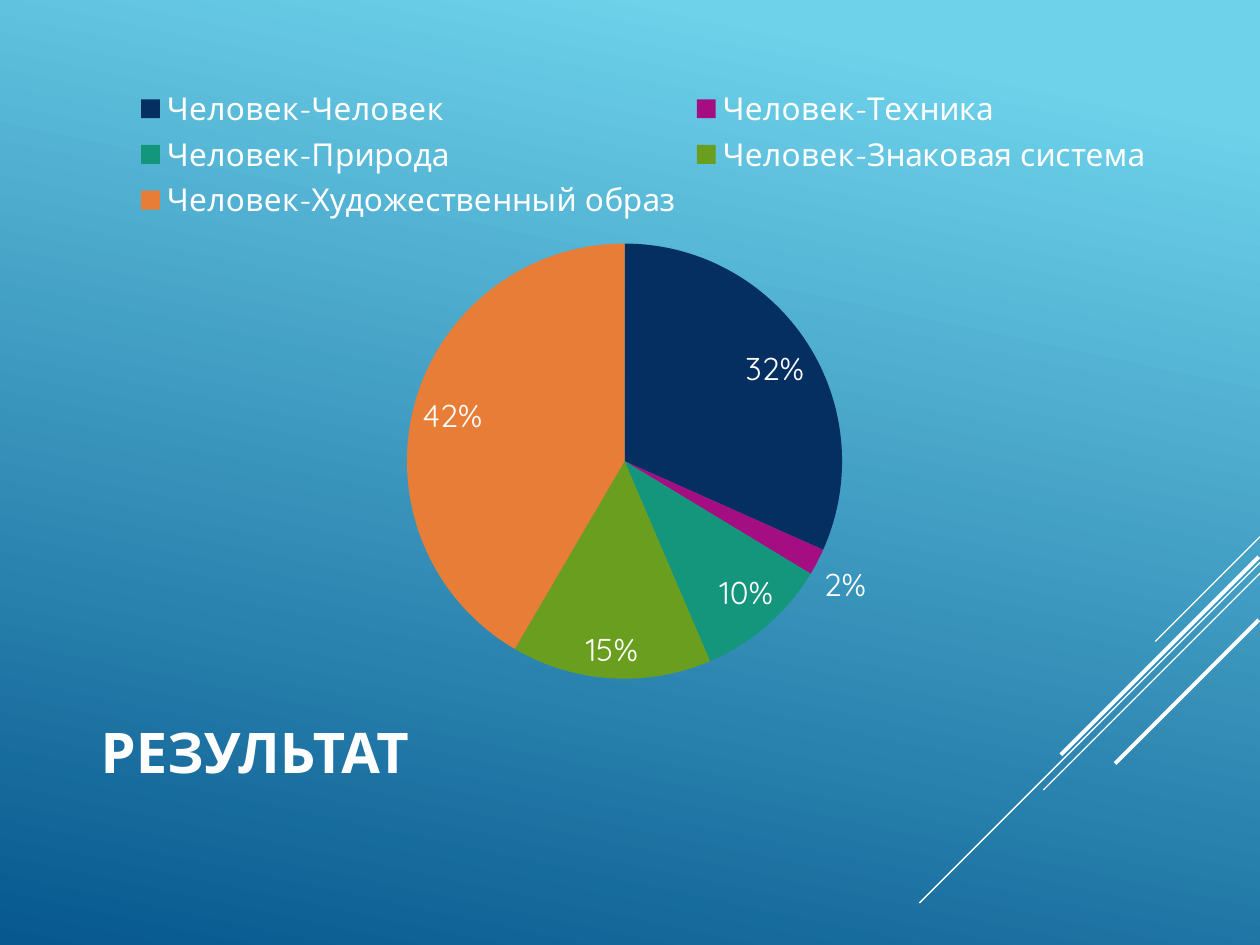
from lxml import etree
from pptx import Presentation
from pptx.chart.data import CategoryChartData
from pptx.dml.color import RGBColor
from pptx.enum.chart import XL_CHART_TYPE, XL_LABEL_POSITION, XL_LEGEND_POSITION
from pptx.enum.shapes import MSO_CONNECTOR
from pptx.enum.text import MSO_ANCHOR, PP_ALIGN
from pptx.oxml.ns import qn
from pptx.util import Pt

PIE = XL_CHART_TYPE.PIE
FIT = XL_LABEL_POSITION.BEST_FIT
TOP = XL_LEGEND_POSITION.TOP
LINE = MSO_CONNECTOR.STRAIGHT
MIDDLE = MSO_ANCHOR.MIDDLE
LEFT = PP_ALIGN.LEFT

FONT = "Quicksand"
COLORS = {
    "white": "FFFFFF", "sky": "6ED2EB", "deep": "06588E",
    "navy": "052F61", "plum": "A50E82", "teal": "14967C",
    "green": "6A9E1F", "orange": "E87D37",
}


def color(name):
    return RGBColor.from_string(COLORS[name])


def write(frame, text, *, size, bold=False, ink="white", align=LEFT, anchor=MIDDLE):
    frame.word_wrap = True
    frame.vertical_anchor = anchor
    par = frame.paragraphs[0]
    par.alignment = align
    run = par.add_run()
    run.text = text
    run.font.name = FONT
    run.font.size = Pt(size)
    run.font.bold = bold
    run.font.color.rgb = color(ink)


deck = Presentation()
deck.slide_width, deck.slide_height = Pt(720), Pt(540)
slide = deck.slides.add_slide(deck.slide_layouts[5])

# Background gradient (the angle counts counter-clockwise)
fill = slide.background.fill
fill.gradient()
fill.gradient_angle = 258
for stop, (name, place) in zip(fill.gradient_stops, [("sky", 0.1), ("deep", 1)]):
    stop.color.rgb = color(name)
    stop.position = place

# Diagonal lines: right end x and y, left end x and y, width
for x1, y1, x2, y2, width in [
    (720, 306.7, 660.2, 366.5, 0.75),
    (720, 321.4, 525.4, 516, 0.75),
    (720, 327.6, 596.2, 451.4, 0.75),
    (719.3, 318.2, 606.2, 431.3, 2.25),
    (719.3, 354.2, 637.2, 436.3, 2.25),
]:
    line = slide.shapes.add_connector(LINE, Pt(x1), Pt(y1), Pt(x2), Pt(y2))
    line.line.color.rgb = color("white")
    line.line.width = Pt(width)
    etree.SubElement(line.element.spPr, qn("a:effectLst"))

# Title
title = slide.shapes.title
title.left, title.top, title.width, title.height = Pt(42), Pt(385), Pt(510), Pt(88.5)
title.text_frame.margin_left = Pt(15.5)
write(title.text_frame, "РЕЗУЛЬТАТ", size=32, bold=True)

# Pie chart
slices = [
    ("Человек-Человек", 32, "navy"),
    ("Человек-Техника", 2, "plum"),
    ("Человек-Природа", 10, "teal"),
    ("Человек-Знаковая система", 15, "green"),
    ("Человек-Художественный образ", 42, "orange"),
]
data = CategoryChartData()
data.categories = [name for name, _, _ in slices]
data.add_series("Series 1", [value for _, value, _ in slices])
chart = slide.shapes.add_chart(PIE, Pt(42), Pt(42), Pt(651), Pt(367), data).chart
chart.has_title = False
chart.font.name = FONT
chart.font.size = Pt(18)
chart.font.color.rgb = color("white")
chart.has_legend = True
chart.legend.position = TOP
chart.legend.include_in_layout = False

plot = chart.plots[0]
plot.vary_by_categories = True
for i, (_, _, shade) in enumerate(slices):
    part = plot.series[0].points[i].format
    part.fill.solid()
    part.fill.fore_color.rgb = color(shade)
    part.line.fill.background()

# Percent labels
plot.has_data_labels = True
labels = plot.data_labels
labels.show_percentage = True
labels.show_value = False
labels.number_format = "0%"
labels.number_format_is_linked = False
labels.position = FIT

deck.save("out.pptx")
